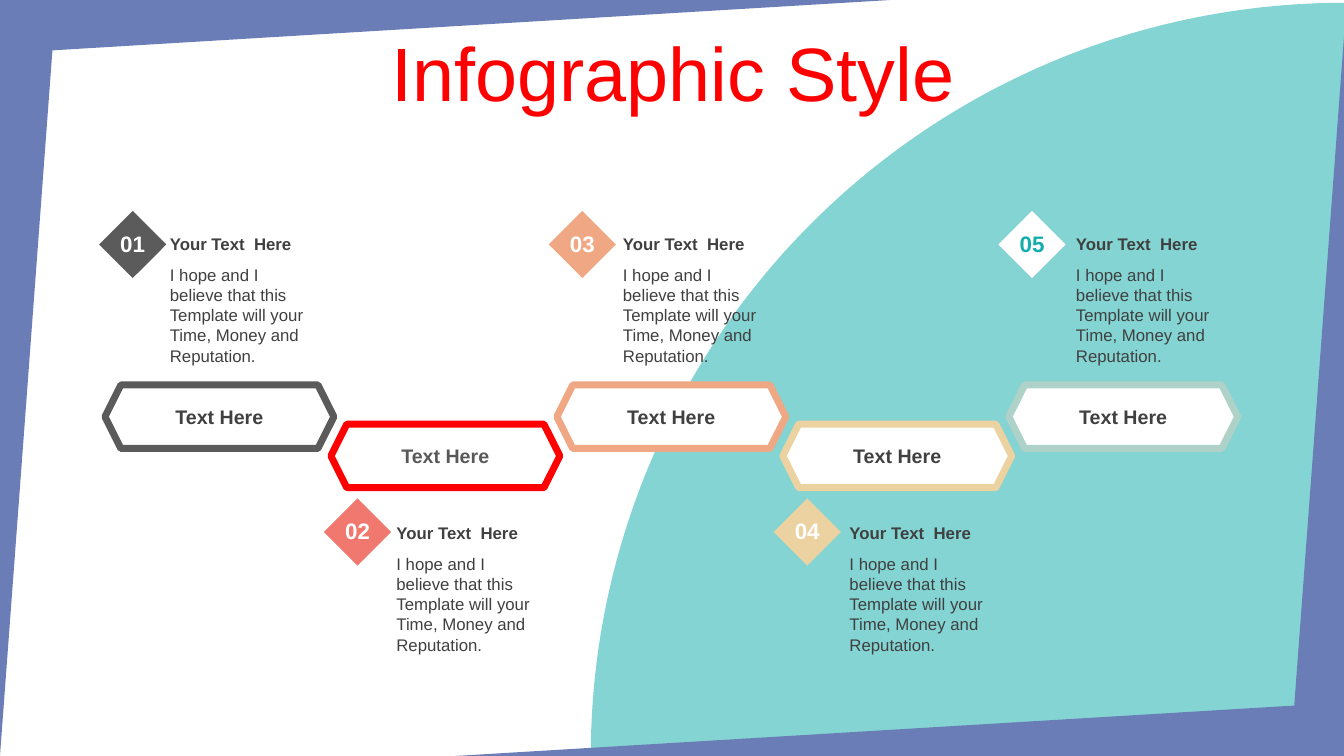
import math

from lxml import etree
from pptx import Presentation
from pptx.dml.color import RGBColor
from pptx.enum.shapes import MSO_SHAPE
from pptx.enum.text import MSO_ANCHOR, PP_ALIGN
from pptx.oxml.ns import qn
from pptx.util import Pt

HEXAGON = MSO_SHAPE.HEXAGON
SQUARE = MSO_SHAPE.RECTANGLE
TOP, MIDDLE = MSO_ANCHOR.TOP, MSO_ANCHOR.MIDDLE
LEFT, CENTER = PP_ALIGN.LEFT, PP_ALIGN.CENTER

WIDTH, HEIGHT = 960, 540
FONT = "Arial"
COLORS = {
    "white": "FFFFFF", "text": "404040", "gray text": "595959",
    "teal": "13ADAB", "frame": "6A7DB7", "red": "FF0000",
    "gray": "5B5B5B", "coral": "F0786E", "orange": "F0A884",
    "sand": "EBD2A0", "mint": "AFD2C8",
}

HEADING = "Your Text  Here"
BODY = "I hope and I believe that this Template will your Time, Money and Reputation."
# Border, label, badge and number colour of each step
STEPS = [
    ("gray", "text", "gray", "white"),
    ("red", "gray text", "coral", "white"),
    ("orange", "text", "orange", "white"),
    ("sand", "text", "sand", "white"),
    ("mint", "text", "white", "teal"),
]


def rgb(color):
    return RGBColor.from_string(COLORS[color])


def add_text(slide, text, left, top, width, height, size=12, color="text",
             bold=False, align=LEFT, anchor=TOP, line_spacing=None, space_before=0):
    box = slide.shapes.add_textbox(Pt(left), Pt(top), Pt(width), Pt(height))
    frame = box.text_frame
    frame.word_wrap = True
    frame.vertical_anchor = anchor
    paragraph = frame.paragraphs[0]
    paragraph.alignment = align
    paragraph.line_spacing = line_spacing
    paragraph.space_before = Pt(space_before)
    run = paragraph.add_run()
    run.text = text
    run.font.name = FONT
    run.font.size = Pt(size)
    run.font.bold = bold
    run.font.color.rgb = rgb(color)


def paint(shape, fill, border=None, border_width=5):
    shape.shadow.inherit = False
    shape.fill.solid()
    shape.fill.fore_color.rgb = rgb(fill)
    if border:
        shape.line.color.rgb = rgb(border)
        shape.line.width = Pt(border_width)
    else:
        shape.line.fill.background()


def add_shape(slide, kind, left, top, width, height, fill, border=None, rotation=0):
    shape = slide.shapes.add_shape(kind, Pt(left), Pt(top), Pt(width), Pt(height))
    shape.rotation = rotation
    paint(shape, fill, border)


def add_polygon(slide, points, fill, opacity=None):
    start, *others = [(Pt(x), Pt(y)) for x, y in points]
    builder = slide.shapes.build_freeform(*start)
    builder.add_line_segments(others, close=True)
    shape = builder.convert_to_shape()
    paint(shape, fill)
    if opacity is not None:
        color = shape.fill._xPr.find(qn("a:solidFill")).find(qn("a:srgbClr"))
        etree.SubElement(color, qn("a:alpha"), val=str(opacity * 1000))


def add_quarter_disc(slide, radius):
    angles = [math.radians(degree) for degree in range(91)]
    arc = [(WIDTH - radius * math.cos(angle), HEIGHT - radius * math.sin(angle))
           for angle in angles]
    add_polygon(slide, [(WIDTH, HEIGHT)] + arc, "teal", opacity=52)


def add_frame(slide):
    corner = [(0, 0), (0, HEIGHT), (37.5, 36), (636.5, 0)]
    opposite = [(WIDTH + 2 - x, HEIGHT - y) for x, y in corner]
    for points in (corner, opposite):
        add_polygon(slide, points, "frame")


def add_step(slide, index, border, label_color, badge, number_color):
    lower = index % 2 == 1

    # Hexagon with its label
    left = 75 + 161.4 * index
    top = 303 if lower else 275
    add_shape(slide, HEXAGON, left, top, 163.5, 45.4, "white", border)
    add_text(slide, "Text Here", left + 35.7, top + 10.5, 92, 24.2,
             size=14, color=label_color, bold=True, align=CENTER)

    # Heading and description
    left = 114.3 + 161.8 * index
    top = 370 if lower else 163.5
    add_text(slide, HEADING, left, top, 111, 21.8, bold=True)
    add_text(slide, BODY, left, top + 22, 111, 80)

    # Diamond with its number
    left = 77.8 + 160.6 * index
    top = 363 if lower else 157.6
    add_shape(slide, SQUARE, left, top, 34, 34, badge, rotation=315)
    add_text(slide, f"{index + 1:02}", left + 0.5, top + 3, 33, 26.6,
             size=16, color=number_color, bold=True, align=CENTER)


def main():
    presentation = Presentation()
    presentation.slide_width = Pt(WIDTH)
    presentation.slide_height = Pt(HEIGHT)
    slide = presentation.slides.add_slide(presentation.slide_layouts[6])

    # Background and title
    add_quarter_disc(slide, 538)
    add_text(slide, "Infographic Style", 25, 26.6, 911.5, 57, size=54, color="red",
             align=CENTER, anchor=MIDDLE, line_spacing=0.9, space_before=10)

    # Timeline
    for index, step in enumerate(STEPS):
        add_step(slide, index, *step)

    add_frame(slide)
    presentation.save("out.pptx")


if __name__ == "__main__":
    main()
